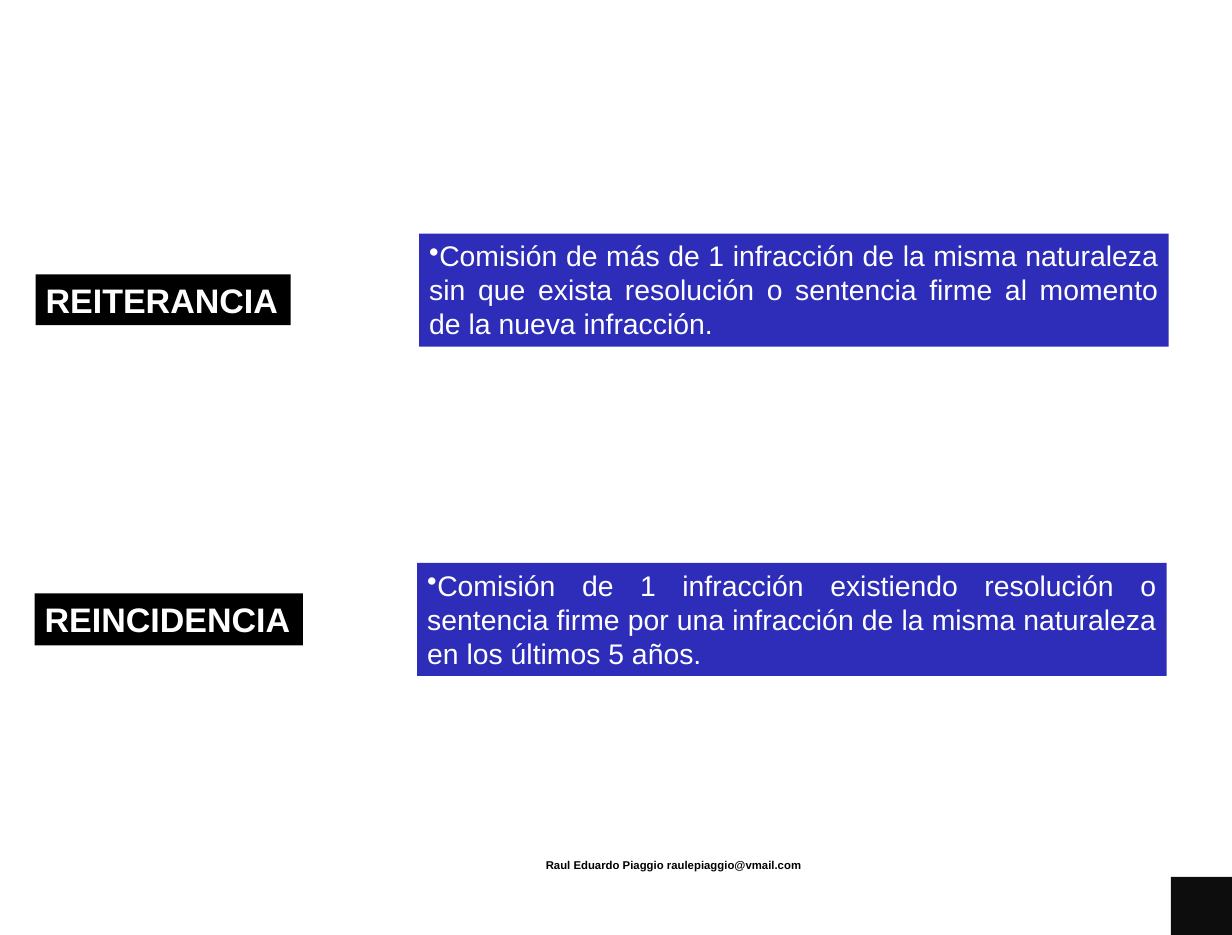
from pptx import Presentation
from pptx.dml.color import RGBColor
from pptx.enum.shapes import MSO_SHAPE
from pptx.enum.text import MSO_ANCHOR, MSO_AUTO_SIZE, PP_ALIGN
from pptx.oxml.xmlchemy import OxmlElement
from pptx.util import Inches, Pt

W, H = 12.08, 9.17
BLACK, WHITE, BLUE = "000000", "FFFFFF", "2D2DB9"
TERMS = [
    ("REITERANCIA", (0.35, 2.69, 2.5, 0.5),
     "Comisión de más de 1 infracción de la misma naturaleza sin que exista "
     "resolución o sentencia firme al momento de la nueva infracción.", (4.11, 2.29)),
    ("REINCIDENCIA", (0.34, 5.82, 2.63, 0.51),
     "Comisión de 1 infracción existiendo resolución o sentencia firme por una "
     "infracción de la misma naturaleza en los últimos 5 años.", (4.09, 5.52)),
]
DEFINITION_SIZE = (7.35, 1.11)
FOOTER = "Raul Eduardo Piaggio raulepiaggio@vmail.com"
FOOTER_BOX = (4.13, 8.35, 3.83, 0.61)
BUTTON_SIZE = (0.6, 0.57)


def rgb(color):
    return RGBColor.from_string(color)


def add_box(s, kind, box, color):
    sp = s.shapes.add_shape(kind, *map(Inches, box))
    sp.shadow.inherit = False
    sp.fill.solid()
    sp.fill.fore_color.rgb = rgb(color)
    sp.line.fill.background()
    return sp


def write(sp, text, size, color, bold=False, align=PP_ALIGN.LEFT, wrap=True, bullet=False):
    tf = sp.text_frame
    tf.word_wrap = wrap
    tf.vertical_anchor = MSO_ANCHOR.TOP
    p = tf.paragraphs[0]
    p.alignment = align
    if bullet:
        pPr = p._p.get_or_add_pPr()
        pPr.set("marL", "0")
        pPr.set("indent", "0")
        bu = OxmlElement("a:buChar")
        bu.set("char", "•")
        pPr.append(bu)
    r = p.add_run()
    r.text = text
    r.font.name = "Arial"
    r.font.size = Pt(size)
    r.font.bold = bold
    r.font.color.rgb = rgb(color)
    return tf


prs = Presentation()
prs.slide_width, prs.slide_height = Inches(W), Inches(H)
s = prs.slides.add_slide(prs.slide_layouts[6])

footer = s.shapes.add_textbox(*map(Inches, FOOTER_BOX))
tf = write(footer, FOOTER, 8, BLACK, bold=True, align=PP_ALIGN.RIGHT)
tf.margin_top = tf.margin_bottom = Inches(0.1)

bw, bh = BUTTON_SIZE
button = add_box(s, MSO_SHAPE.ACTION_BUTTON_CUSTOM, (W - bw, H - bh, bw, bh), BLACK)
alpha = OxmlElement("a:alpha")
alpha.set("val", "95000")
button._element.spPr.find(".//{*}srgbClr").append(alpha)

for term, term_box, definition, corner in TERMS:
    label = add_box(s, MSO_SHAPE.RECTANGLE, term_box, BLACK)
    tf = write(label, term, 24, WHITE, bold=True, wrap=False)
    tf.auto_size = MSO_AUTO_SIZE.SHAPE_TO_FIT_TEXT
    panel = add_box(s, MSO_SHAPE.RECTANGLE, corner + DEFINITION_SIZE, BLUE)
    tf = write(panel, definition, 20, WHITE, align=PP_ALIGN.JUSTIFY, bullet=True)
    tf.auto_size = MSO_AUTO_SIZE.SHAPE_TO_FIT_TEXT

prs.save("out.pptx")
